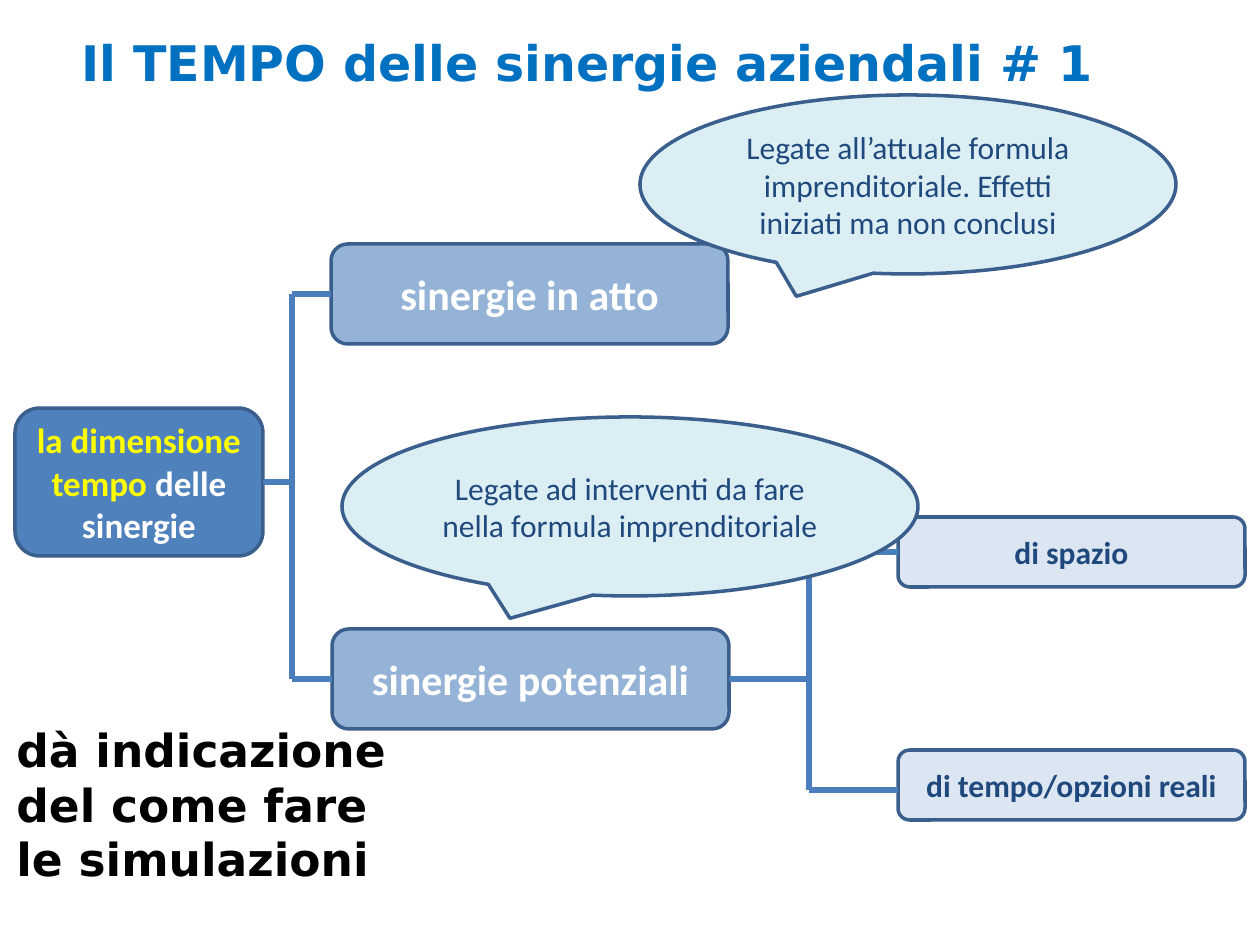
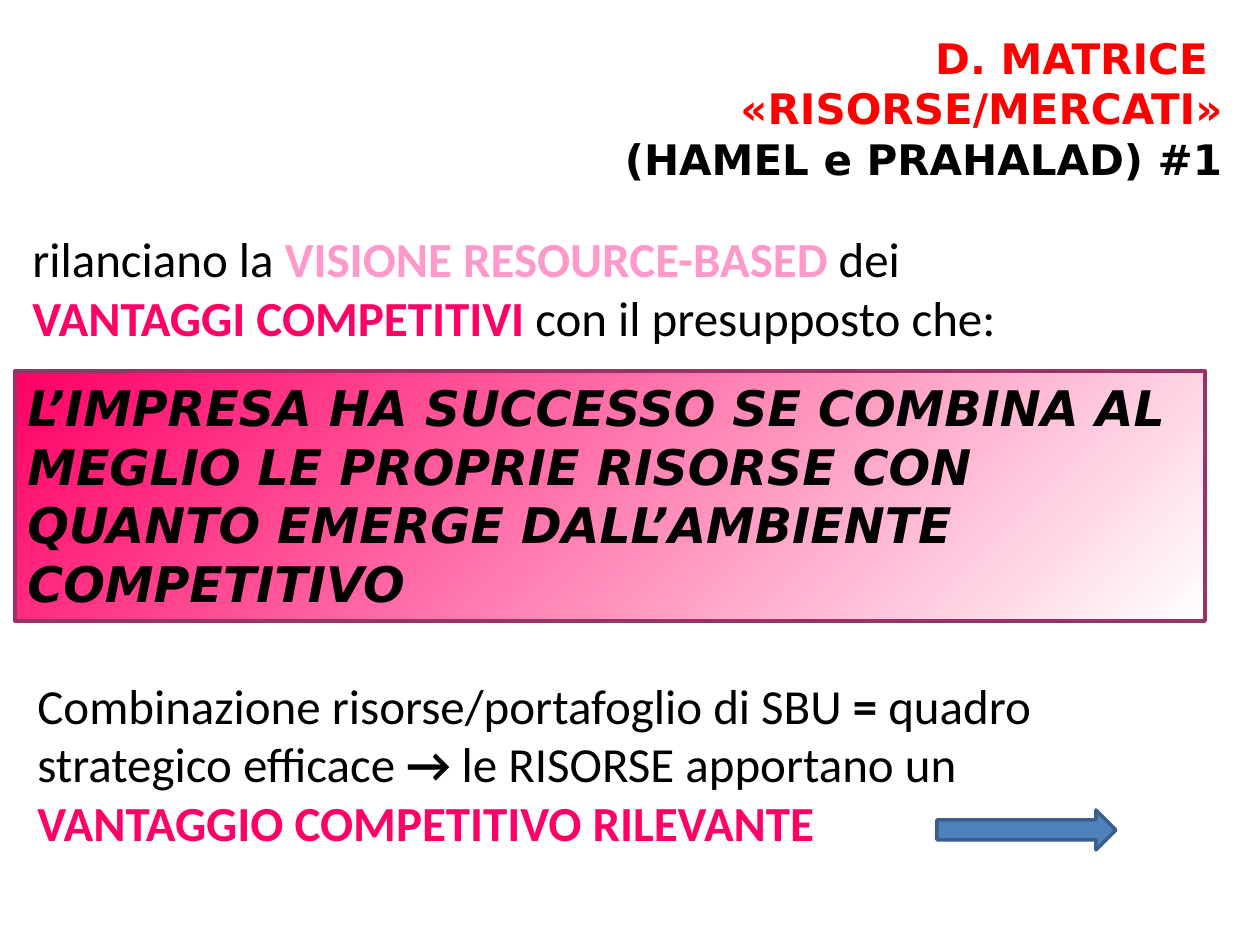
from dataclasses import dataclass
from typing import NamedTuple, Optional

from lxml.etree import SubElement
from pptx import Presentation
from pptx.dml.color import RGBColor
from pptx.enum.shapes import MSO_CONNECTOR, MSO_SHAPE
from pptx.enum.text import MSO_ANCHOR, MSO_AUTO_SIZE, PP_ALIGN
from pptx.oxml.ns import qn
from pptx.util import Pt

EMU_PER_PX = 914400 / 126
TITLE_ONLY_LAYOUT = 5
LEFT, RIGHT = 1, 3
BODY_FONT, DISPLAY_FONT = "Calibri", "DejaVu Sans"

COLORS = {
    "black": "000000",
    "white": "FFFFFF",
    "yellow": "FFFF00",
    "red": "FF0000",
    "title blue": "0070C0",
    "navy": "1F497D",
    "blue": "4F81BD",
    "mid blue": "95B3D7",
    "pale blue": "DCE6F2",
    "bubble": "DBEEF4",
    "outline": "3A5F8C",
    "connector": "4B7EBC",
    "magenta": "FF0066",
    "pink": "FF99CC",
    "plum": "993366",
}


class Area(NamedTuple):
    left: int
    top: int
    width: int
    height: int


class Span(NamedTuple):
    text: str
    color: str = "black"
    bold: bool = False
    italic: bool = False


@dataclass(frozen=True)
class TextStyle:
    size: int
    font: str = BODY_FONT
    align: PP_ALIGN = PP_ALIGN.LEFT
    anchor: MSO_ANCHOR = MSO_ANCHOR.TOP


@dataclass(frozen=True)
class Block:
    area: Area
    preset: MSO_SHAPE
    fill: str
    size: int = 18
    spans: tuple[Span, ...] = ()


@dataclass(frozen=True)
class Link:
    start: tuple[int, int]
    end: tuple[int, int]
    source: Optional[str] = None
    target: Optional[str] = None


def px(length: int) -> int:
    return round(length * EMU_PER_PX)


def place(area: Area) -> tuple[int, ...]:
    return tuple(px(length) for length in area)


def rgb(name: str) -> RGBColor:
    return RGBColor.from_string(COLORS[name])


def write(shape, paragraphs, style: TextStyle) -> None:
    """Fill a shape with paragraphs, each a sequence of spans."""
    frame = shape.text_frame
    frame.auto_size = MSO_AUTO_SIZE.NONE
    frame.word_wrap = True
    frame.vertical_anchor = style.anchor
    for index, spans in enumerate(paragraphs):
        paragraph = frame.add_paragraph() if index else frame.paragraphs[0]
        paragraph.alignment = style.align
        for span in spans:
            run = paragraph.add_run()
            run.text = span.text
            run.font.name = style.font
            run.font.size = Pt(style.size)
            run.font.bold = span.bold
            run.font.italic = span.italic
            run.font.color.rgb = rgb(span.color)


def add_titled_slide(presentation, area: Area, paragraphs, size: int):
    slide = presentation.slides.add_slide(presentation.slide_layouts[TITLE_ONLY_LAYOUT])
    title = slide.shapes.title
    title.left, title.top, title.width, title.height = place(area)
    write(title, paragraphs, TextStyle(size, DISPLAY_FONT, PP_ALIGN.RIGHT))
    return slide


def add_text(slide, area: Area, spans, style: TextStyle) -> None:
    write(slide.shapes.add_textbox(*place(area)), [spans], style)


def add_block(slide, block: Block):
    shape = slide.shapes.add_shape(block.preset, *place(block.area))
    shape.shadow.inherit = False
    shape.fill.solid()
    shape.fill.fore_color.rgb = rgb(block.fill)
    shape.line.color.rgb = rgb("outline")
    shape.line.width = Pt(2)
    if block.spans:
        style = TextStyle(block.size, align=PP_ALIGN.CENTER, anchor=MSO_ANCHOR.MIDDLE)
        write(shape, [block.spans], style)
    return shape


def add_link(slide, link: Link, boxes: dict) -> None:
    connector = slide.shapes.add_connector(
        MSO_CONNECTOR.STRAIGHT, *(px(length) for length in link.start + link.end)
    )
    connector.line.color.rgb = rgb("connector")
    connector.line.width = Pt(3)
    SubElement(connector._element.spPr, qn("a:effectLst"))
    if link.source:
        connector.begin_connect(boxes[link.source], RIGHT)
    if link.target:
        connector.end_connect(boxes[link.target], LEFT)


def rounded(area: Area, fill: str, size: int, *spans: Span) -> Block:
    return Block(area, MSO_SHAPE.ROUNDED_RECTANGLE, fill, size, spans)


def bubble(area: Area, text: str) -> Block:
    return Block(area, MSO_SHAPE.OVAL_CALLOUT, "bubble", 18, (Span(text, "navy"),))


# Synergy tree: boxes, then the two forks that join them
SYNERGY_BOXES = {
    "root": rounded(Area(15, 408, 248, 148), "blue", 20,
                    Span("la dimensione tempo ", "yellow", True),
                    Span("delle sinergie", "white", True)),
    "current": rounded(Area(331, 244, 397, 100), "mid blue", 24,
                       Span("sinergie in atto", "white", True)),
    "potential": rounded(Area(332, 629, 397, 100), "mid blue", 24,
                         Span("sinergie potenziali", "white", True)),
    "space": rounded(Area(898, 517, 347, 70), "pale blue", 18,
                     Span("di spazio", "navy", True)),
    "time": rounded(Area(898, 750, 347, 70), "pale blue", 18,
                    Span("di tempo/opzioni reali", "navy", True)),
}
FIRST_FORK_X, SECOND_FORK_X = 292, 809
SYNERGY_LINKS = (
    Link((263, 482), (FIRST_FORK_X, 482), source="root"),
    Link((FIRST_FORK_X, 294), (FIRST_FORK_X, 679)),
    Link((FIRST_FORK_X, 294), (331, 294), target="current"),
    Link((FIRST_FORK_X, 679), (332, 679), target="potential"),
    Link((729, 679), (SECOND_FORK_X, 679), source="potential"),
    Link((SECOND_FORK_X, 552), (SECOND_FORK_X, 790)),
    Link((SECOND_FORK_X, 552), (898, 552), target="space"),
    Link((SECOND_FORK_X, 790), (898, 790)),
)
SYNERGY_BUBBLES = (
    bubble(Area(640, 95, 536, 179),
           "Legate all’attuale formula imprenditoriale. Effetti iniziati ma non conclusi"),
    bubble(Area(342, 417, 576, 179),
           "Legate ad interventi da fare nella formula imprenditoriale"),
)


def build_synergy_slide(presentation) -> None:
    title = [[Span("Il TEMPO delle sinergie aziendali # 1", "title blue", True)]]
    slide = add_titled_slide(presentation, Area(55, 26, 1050, 72), title, 28)
    boxes = {key: add_block(slide, block) for key, block in SYNERGY_BOXES.items()}
    for link in SYNERGY_LINKS:
        add_link(slide, link, boxes)
    for note in SYNERGY_BUBBLES:
        add_block(slide, note)
    add_text(slide, Area(4, 716, 408, 178),
             [Span("dà indicazione del come fare le simulazioni", bold=True)],
             TextStyle(26, DISPLAY_FONT))


def build_matrix_slide(presentation) -> None:
    title = [
        [Span("D. MATRICE ", "red", True)],
        [Span("«RISORSE/MERCATI»", "red", True)],
        [Span("(HAMEL e PRAHALAD) #1", bold=True)],
    ]
    slide = add_titled_slide(presentation, Area(315, 26, 920, 165), title, 24)
    body = TextStyle(28)

    # Premise
    add_text(slide, Area(20, 222, 1106, 130), [
        Span("rilanciano la "),
        Span("VISIONE RESOURCE-BASED ", "pink", True),
        Span("dei "),
        Span("VANTAGGI COMPETITIVI", "magenta", True),
        Span(" con il presupposto che:"),
    ], body)

    # Gradient banner with the key statement
    banner = slide.shapes.add_shape(MSO_SHAPE.RECTANGLE, *place(Area(15, 371, 1190, 250)))
    banner.shadow.inherit = False
    banner.fill.gradient()
    banner.fill.gradient_angle = 315
    for stop, color in zip(banner.fill.gradient_stops, ("magenta", "white")):
        stop.color.rgb = rgb(color)
    banner.line.color.rgb = rgb("plum")
    banner.line.width = Pt(2.25)
    statement = Span(
        "L’IMPRESA HA SUCCESSO SE COMBINA AL MEGLIO LE PROPRIE RISORSE CON "
        "QUANTO EMERGE DALL’AMBIENTE COMPETITIVO", bold=True, italic=True)
    write(banner, [[statement]], TextStyle(28, DISPLAY_FONT))

    # Conclusion and onward arrow
    add_text(slide, Area(25, 669, 1176, 190), [
        Span("Combinazione risorse/portafoglio di SBU "),
        Span("=", bold=True),
        Span(" quadro strategico efficace "),
        Span("→", bold=True),
        Span(" le RISORSE apportano un "),
        Span("VANTAGGIO COMPETITIVO RILEVANTE", "magenta", True),
    ], body)
    add_block(slide, Block(Area(937, 810, 179, 40), MSO_SHAPE.RIGHT_ARROW, "blue"))


def main() -> None:
    presentation = Presentation()
    presentation.slide_width, presentation.slide_height = px(1260), px(945)
    build_synergy_slide(presentation)
    build_matrix_slide(presentation)
    presentation.save("out.pptx")


if __name__ == "__main__":
    main()
